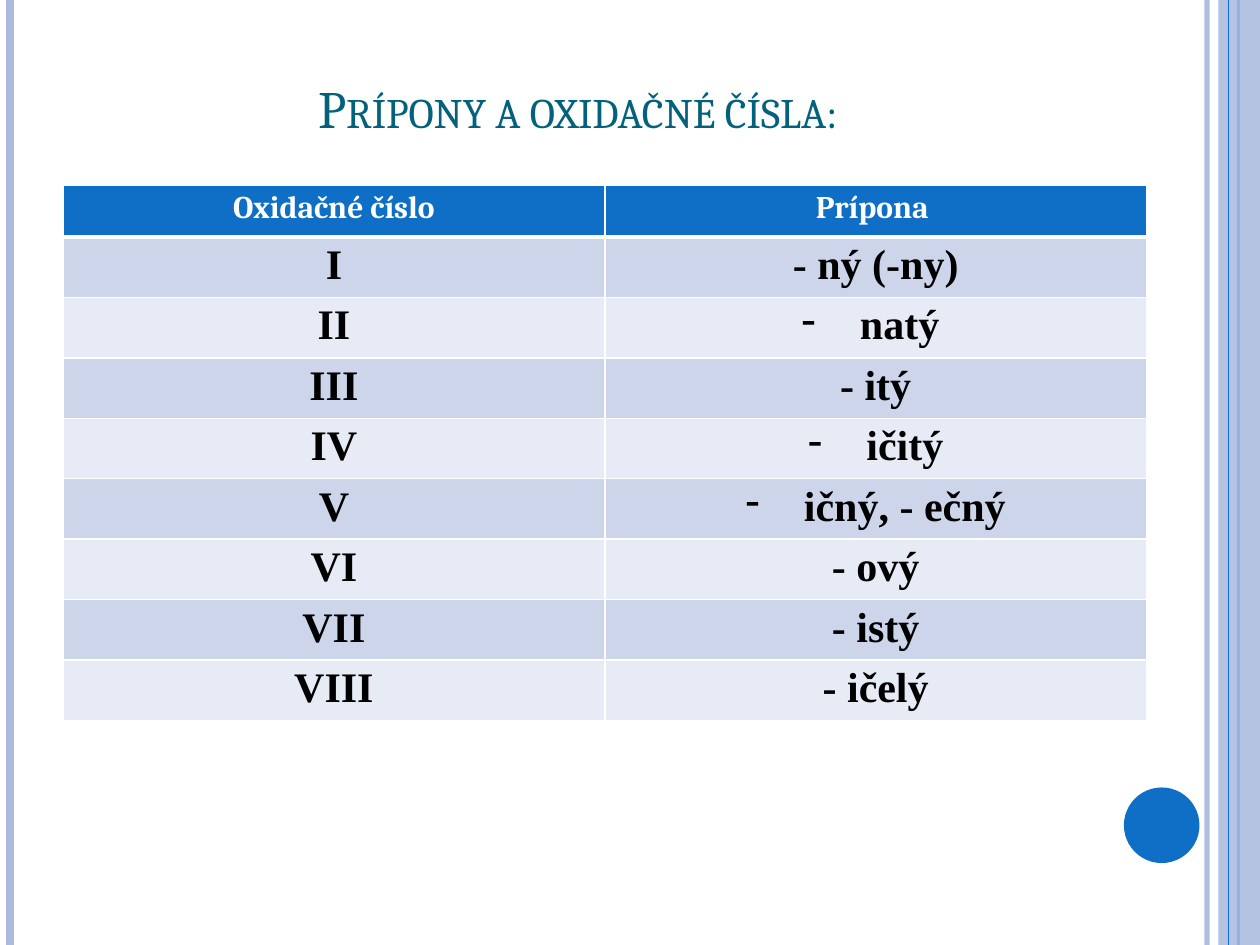
from lxml import etree
from pptx import Presentation
from pptx.dml.color import RGBColor
from pptx.enum.shapes import MSO_CONNECTOR, MSO_SHAPE
from pptx.enum.text import MSO_ANCHOR, PP_ALIGN
from pptx.oxml.ns import qn
from pptx.util import Inches, Pt

STRAIGHT = MSO_CONNECTOR.STRAIGHT
RECTANGLE, OVAL = MSO_SHAPE.RECTANGLE, MSO_SHAPE.OVAL
CENTER, BOTTOM = PP_ALIGN.CENTER, MSO_ANCHOR.BOTTOM

BLUE, LAVENDER, TEAL, WHITE, BLACK = "0F6FC6", "ABBBDF", "04617B", "FFFFFF", "000000"
BANDS = ("CCD5EA", "E7EBF5")

TITLE = "Prípony a oxidačné čísla:"
HEADER = ("Oxidačné číslo", "Prípona ")
SUFFIXES = [
    ("I", "- ný (-ny)", False),
    ("II", " natý ", True),
    ("III", "- itý", False),
    ("IV", " ičitý", True),
    ("V", " ičný, - ečný", True),
    ("VI", "- ový", False),
    ("VII", "- istý", False),
    ("VIII", "- ičelý", False),
]
BACK_STRIPES = [(9.58, LAVENDER, 3, 93), (0.08, LAVENDER, 4.5, 100), (9.83, BLUE, 1.5, 100)]
FRONT_STRIPE = (9.75, BLUE, 0.75, 100)
HEADER_HEIGHT, ROW_HEIGHT = 0.41, 0.47


def rgb(color):
    """Turn a hex string into a colour."""
    return RGBColor.from_string(color)


def set_alpha(element, percent):
    """Make the first solid colour under an element translucent."""
    color = element.find(".//" + qn("a:srgbClr"))
    etree.SubElement(color, qn("a:alpha"), val=str(percent * 1000))


def add_stripe(slide, x, color, width, alpha):
    """Draw a full-height vertical line."""
    stripe = slide.shapes.add_connector(STRAIGHT, Inches(x), 0, Inches(x), Inches(7.5))
    stripe.line.color.rgb = rgb(color)
    stripe.line.width = Pt(width)
    properties = stripe.element.spPr
    if alpha < 100:
        set_alpha(properties, alpha)
    etree.SubElement(properties, qn("a:effectLst"))


def add_block(slide, preset, box, color, alpha=100):
    """Draw a filled shape without outline."""
    block = slide.shapes.add_shape(preset, *map(Inches, box))
    block.shadow.inherit = False
    block.fill.solid()
    block.fill.fore_color.rgb = rgb(color)
    block.line.fill.background()
    if alpha < 100:
        set_alpha(block.element.spPr, alpha)


def write(frame, text, size, font, color, bold=False, small_caps=False, dash=False):
    """Write one centred, formatted paragraph."""
    paragraph = frame.paragraphs[0]
    paragraph.alignment = CENTER
    run = paragraph.add_run()
    run.text = text
    run.font.size, run.font.name, run.font.bold = Pt(size), font, bold
    run.font.color.rgb = rgb(color)
    if small_caps:
        run.font._element.set("cap", "small")
    if dash:
        properties = paragraph._p.get_or_add_pPr()
        properties.set("marL", str(Inches(0.38)))
        properties.set("indent", str(-Inches(0.38)))
        etree.SubElement(properties, qn("a:buFontTx"))
        etree.SubElement(properties, qn("a:buChar"), char="-")


def style_cell(cell, color, bottom_width=1):
    """Fill a cell and give it white borders."""
    cell.margin_top = cell.margin_bottom = Inches(0.04)
    properties = cell._tc.get_or_add_tcPr()
    for side, width in (("L", 1), ("R", 1), ("T", 1), ("B", bottom_width)):
        border = etree.SubElement(properties, qn(f"a:ln{side}"), w=str(Pt(width)))
        fill = etree.SubElement(border, qn("a:solidFill"))
        etree.SubElement(fill, qn("a:srgbClr"), val=WHITE)
    cell.fill.solid()
    cell.fill.fore_color.rgb = rgb(color)


def add_suffix_table(slide):
    """Build the table of oxidation numbers and suffixes."""
    height = HEADER_HEIGHT + ROW_HEIGHT * len(SUFFIXES)
    box = map(Inches, (0.5, 1.47, 8.6, height))
    table = slide.shapes.add_table(len(SUFFIXES) + 1, len(HEADER), *box).table
    table.rows[0].height = Inches(HEADER_HEIGHT)
    for column, heading in enumerate(HEADER):
        cell = table.cell(0, column)
        style_cell(cell, BLUE, bottom_width=3)
        write(cell.text_frame, heading, 18, "Cambria", WHITE, bold=True)
    for row, (number, suffix, dash) in enumerate(SUFFIXES, 1):
        table.rows[row].height = Inches(ROW_HEIGHT)
        for column, (text, dashed) in enumerate(((number, False), (suffix, dash))):
            cell = table.cell(row, column)
            style_cell(cell, BANDS[(row - 1) % 2], bottom_width=1)
            write(cell.text_frame, text, 24, "Times New Roman", BLACK, bold=True, dash=dashed)
        if row == 1:
            for cell in table.rows[row].cells:
                cell._tc.tcPr.find(qn("a:lnT")).set("w", str(Pt(3)))


def main():
    """Build and save the slide."""
    deck = Presentation()
    deck.slide_width, deck.slide_height = Inches(10), Inches(7.5)
    slide = deck.slides.add_slide(deck.slide_layouts[6])
    for stripe in BACK_STRIPES:
        add_stripe(slide, *stripe)
    add_block(slide, RECTANGLE, (9.67, 0, 0.33, 7.5), LAVENDER, alpha=87)
    add_stripe(slide, *FRONT_STRIPE)
    add_block(slide, OVAL, (8.92, 6.25, 0.6, 0.6), BLUE)
    title = slide.shapes.add_textbox(*map(Inches, (0.5, 0.3, 8.17, 0.85))).text_frame
    title.word_wrap = True
    title.vertical_anchor = BOTTOM
    write(title, TITLE, 30, "Cambria", TEAL, small_caps=True)
    add_suffix_table(slide)
    deck.save("out.pptx")


if __name__ == "__main__":
    main()
